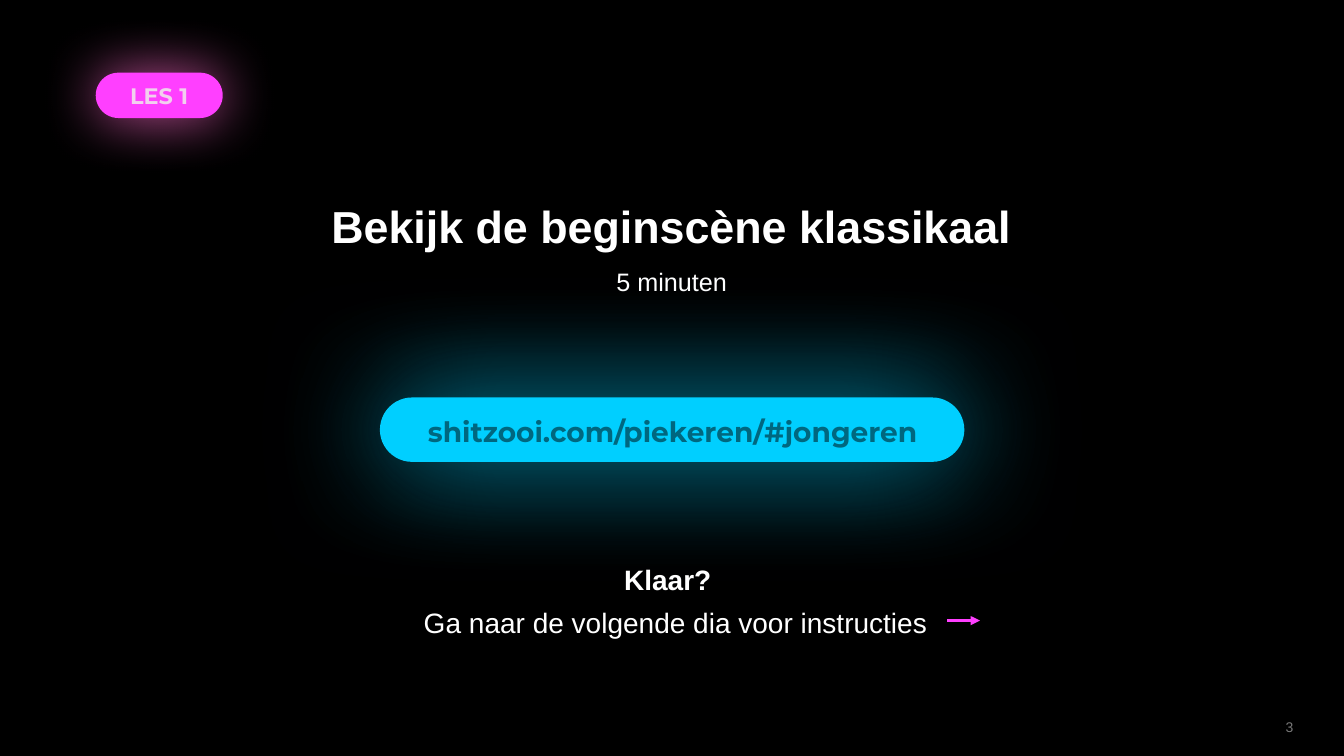
from lxml import etree
from pptx import Presentation
from pptx.dml.color import RGBColor
from pptx.enum import shapes, text
from pptx.oxml import ns
from pptx.util import Pt

BLACK = RGBColor(0x00, 0x00, 0x00)
WHITE = RGBColor(0xFF, 0xFF, 0xFF)
GREY = RGBColor(0x79, 0x79, 0x79)
PINK = RGBColor(0xFF, 0x3F, 0xFF)
PINK_GLOW = RGBColor(0xC8, 0x53, 0x9F)
PALE_PINK = RGBColor(0xF2, 0xCF, 0xEE)
CYAN = RGBColor(0x00, 0xCF, 0xFF)
DARK_CYAN = RGBColor(0x00, 0x67, 0x7F)

ALIGN = text.PP_ALIGN
HEADING = dict(name="Arial", size=Pt(32), bold=True)
SUBHEADING = dict(name="Arial", size=Pt(18))
BODY = dict(name="Arial", size=Pt(20))
BODY_BOLD = dict(BODY, bold=True)
BADGE = dict(name="Montserrat", size=Pt(16), bold=True)
LINK = dict(name="Montserrat", size=Pt(20), bold=True)
PAGE_NUMBER = dict(name="Arial", size=Pt(10))


def add_text(parent, area, words, style, color, align=ALIGN.CENTER,
             anchor=text.MSO_ANCHOR.TOP):
    box = parent.add_textbox(*map(Pt, area))
    frame = box.text_frame
    frame.word_wrap = True
    frame.vertical_anchor = anchor
    para = frame.paragraphs[0]
    para.alignment = align
    span = para.add_run()
    span.text = words
    for key, value in style.items():
        setattr(span.font, key, value)
    span.font.color.rgb = color


def add_glow(shape, color, blur, opacity):
    """Surround the shape with a centred, blurred outer shadow."""
    shape.shadow.inherit = False
    effects = shape._element.spPr.find(ns.qn("a:effectLst"))
    shadow = etree.SubElement(effects, ns.qn("a:outerShdw"), blurRad=str(Pt(blur)),
                              dist="0", dir="0", algn="ctr", rotWithShape="0")
    tint = etree.SubElement(shadow, ns.qn("a:srgbClr"), val=str(color))
    etree.SubElement(tint, ns.qn("a:alpha"), val=str(opacity * 1000))


def add_pill(page, area, fill, glow, label_area, label, style, color):
    """Group a glowing, fully rounded bar with its label; glow is colour, blur, opacity."""
    group = page.shapes.add_group_shape().shapes
    pill = group.add_shape(shapes.MSO_SHAPE.ROUNDED_RECTANGLE, *map(Pt, area))
    pill.adjustments[0] = 0.5
    pill.fill.solid()
    pill.fill.fore_color.rgb = fill
    pill.line.fill.background()
    add_glow(pill, *glow)
    add_text(group, label_area, label, style, color)


def add_arrow(page, start, end, color, width):
    arrow = page.shapes.add_connector(shapes.MSO_CONNECTOR.STRAIGHT,
                                      *map(Pt, start + end))
    arrow.line.color.rgb = color
    arrow.line.width = Pt(width)
    etree.SubElement(arrow.line._get_or_add_ln(), ns.qn("a:tailEnd"), type="triangle")
    etree.SubElement(arrow._element.spPr, ns.qn("a:effectLst"))


def main():
    deck = Presentation()
    deck.slide_width, deck.slide_height = Pt(960), Pt(540)
    page = deck.slides.add_slide(deck.slide_layouts[6])
    page.background.fill.solid()
    page.background.fill.fore_color.rgb = BLACK

    add_text(page.shapes, (715, 504.7, 216, 28.8), "3", PAGE_NUMBER, GREY,
             ALIGN.RIGHT, text.MSO_ANCHOR.MIDDLE)
    add_pill(page, (68.4, 51.9, 90.7, 32.4), PINK, (PINK_GLOW, 42.4, 100),
             (55.4, 55.4, 116.6, 26), "LES 1", BADGE, PALE_PINK)
    add_text(page.shapes, (195.8, 138.2, 568, 46), "Bekijk de beginscène klassikaal",
             HEADING, WHITE)
    add_text(page.shapes, (280.8, 186.5, 398, 29), "5 minuten", SUBHEADING, WHITE)
    add_pill(page, (271.4, 283.9, 417.5, 46), CYAN, (CYAN, 88.6, 80),
             (281.5, 292.3, 398, 39.6), "shitzooi.com/piekeren/#jongeren", LINK, DARK_CYAN)
    add_text(page.shapes, (195.8, 398.2, 568, 31.5), "Klaar? ", BODY_BOLD, WHITE)
    add_text(page.shapes, (280.8, 428.6, 398, 31.5),
             " Ga naar de volgende dia voor instructies", BODY, WHITE)
    add_arrow(page, (676.6, 443.3), (700, 443.3), PINK, 2.25)
    deck.save("out.pptx")


if __name__ == "__main__":
    main()
